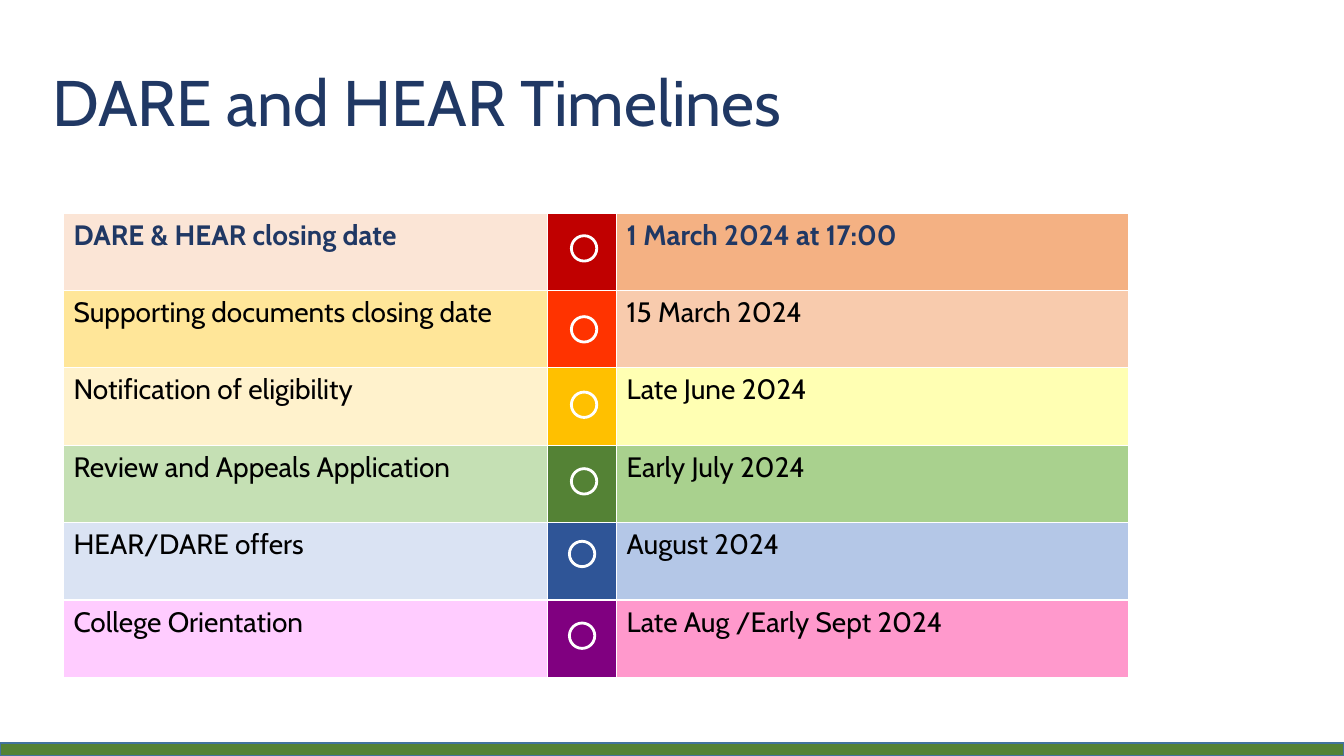
import pptx
import pptx.util
import pptx.dml.color
import pptx.enum.shapes
import pptx.enum.text
import pptx.oxml
import pptx.oxml.ns
from lxml import etree

Cm, Pt = pptx.util.Cm, pptx.util.Pt

# Content: step, date, fills of the three columns, left and top of the marker in cm
HEADING = "DARE and HEAR Timelines"
TIMELINE = [
    ("DARE & HEAR closing date", "1 March 2024 at 17:00",
     ("FBE5D6", "C00000", "F4B183"), (14.4, 5.94)),
    ("Supporting documents closing date", "15 March 2024",
     ("FFE699", "FF3300", "F8CBAD"), (14.4, 7.98)),
    ("Notification of eligibility", "Late June 2024",
     ("FFF2CC", "FFC000", "FFFF99"), (14.4, 9.88)),
    ("Review and Appeals Application", "Early July 2024",
     ("C5E0B4", "548235", "A9D18E"), (14.4, 11.81)),
    ("HEAR/DARE offers", "August 2024",
     ("DAE3F3", "2F5597", "B4C7E7"), (14.35, 13.64)),
    ("College Orientation", "Late Aug /Early Sept 2024",
     ("FFCCFF", "800080", "FF99CC"), (14.35, 15.7)),
]
OPACITY = {"FFFF99": 74}

FONT = "Cabin"
NAVY, BLACK, WHITE = "203864", "000000", "FFFFFF"
GREEN, STEEL = "548235", "43739E"
COLUMN_WIDTHS = (12.2, 1.74, 12.9)
ROW_HEIGHT = 1.95
MARKER_SIZE = 0.64


def colour(target, code):
    target.rgb = pptx.dml.color.RGBColor.from_string(code)


def fill(part, code):
    part.fill.solid()
    colour(part.fill.fore_color, code)


def outline(shape, code, width):
    shape.shadow.inherit = False
    colour(shape.line.color, code)
    shape.line.width = Pt(width)


def write(frame, words, size, code, bold=False):
    frame.text = words
    font = frame.paragraphs[0].runs[0].font
    font.name, font.size, font.bold = FONT, Pt(size), bold
    colour(font.color, code)


def style_cell(cell, code):
    fill(cell, code)
    properties = cell._tc.get_or_add_tcPr()
    if code in OPACITY:
        shade = properties.find(".//" + pptx.oxml.ns.qn("a:srgbClr"))
        alpha = etree.SubElement(shade, pptx.oxml.ns.qn("a:alpha"))
        alpha.set("val", str(OPACITY[code] * 1000))
    for place, side in enumerate(("lnL", "lnR", "lnT", "lnB")):
        border = pptx.oxml.parse_xml(
            f'<a:{side} {pptx.oxml.ns.nsdecls("a")} w="{Pt(1)}"><a:solidFill>'
            f'<a:srgbClr val="{WHITE}"/></a:solidFill></a:{side}>')
        properties.insert(place, border)


deck = pptx.Presentation()
deck.slide_width, deck.slide_height = Cm(33.87), Cm(19.05)
slide = deck.slides.add_slide(deck.slide_layouts[6])
shapes = slide.shapes

# Heading
heading = shapes.add_textbox(Cm(1.07), Cm(0.46), Cm(19.6), Cm(2.8)).text_frame
write(heading, HEADING, 46, NAVY)
heading.word_wrap = False
heading.auto_size = pptx.enum.text.MSO_AUTO_SIZE.SHAPE_TO_FIT_TEXT
heading.paragraphs[0].line_spacing = 1.5

# Timeline table
timeline = shapes.add_table(
    len(TIMELINE), len(COLUMN_WIDTHS), Cm(1.6), Cm(5.37),
    Cm(sum(COLUMN_WIDTHS)), Cm(ROW_HEIGHT * len(TIMELINE))).table
timeline.first_row = timeline.horz_banding = False
for column, width in zip(timeline.columns, COLUMN_WIDTHS):
    column.width = Cm(width)

for row, (step, date, fills, marker_at) in enumerate(TIMELINE):
    timeline.rows[row].height = Cm(ROW_HEIGHT)
    for column, code in enumerate(fills):
        style_cell(timeline.cell(row, column), code)
    is_deadline = row == 0
    for column, words in ((0, step), (2, date)):
        write(timeline.cell(row, column).text_frame, words, 20,
              NAVY if is_deadline else BLACK, is_deadline)

    # Ring marker in the middle column
    left, top = marker_at
    marker = shapes.add_shape(pptx.enum.shapes.MSO_SHAPE.OVAL, Cm(left), Cm(top),
                              Cm(MARKER_SIZE), Cm(MARKER_SIZE))
    marker.fill.background()
    outline(marker, WHITE, 2)

# Footer band
footer = shapes.add_shape(pptx.enum.shapes.MSO_SHAPE.RECTANGLE,
                          0, Cm(18.72), deck.slide_width, Cm(0.33))
fill(footer, GREEN)
outline(footer, STEEL, 1)

deck.save("out.pptx")
